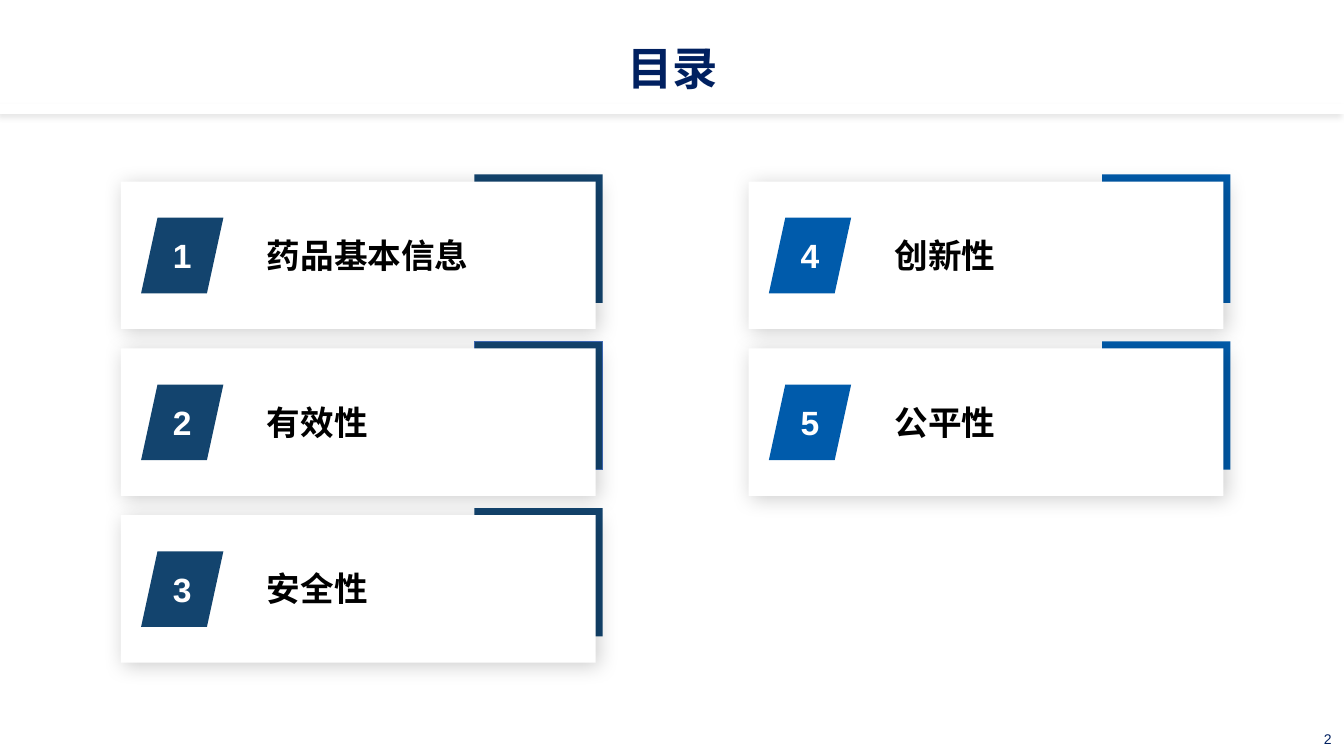
from dataclasses import dataclass
from typing import Optional

import lxml.etree
import pptx
import pptx.dml.color
import pptx.enum.shapes
import pptx.enum.text
import pptx.oxml.ns
import pptx.util

Pt = pptx.util.Pt
RGBColor = pptx.dml.color.RGBColor
Shapes = pptx.enum.shapes.MSO_SHAPE
Align = pptx.enum.text.PP_ALIGN
Anchor = pptx.enum.text.MSO_ANCHOR
qn = pptx.oxml.ns.qn

WHITE = RGBColor(0xFF, 0xFF, 0xFF)
BLACK = RGBColor(0x00, 0x00, 0x00)
TITLE_NAVY = RGBColor(0x00, 0x20, 0x60)
STEEL = RGBColor(0x13, 0x44, 0x6E)
BLUE = RGBColor(0x00, 0x5B, 0xAB)
EDGE_BLUE = RGBColor(0x3F, 0x6A, 0xB6)

LATIN_FONT = "Arial"
CHINESE_FONT = "Noto Sans CJK SC"

CARD_LEFT, CARD_TOP = 86.4, 129.7
COLUMN_PITCH, ROW_PITCH = 448.4, 119.15


@dataclass(frozen=True)
class Box:
    left: float
    top: float
    width: float
    height: float

    def moved(self, x: float, y: float) -> "Box":
        return Box(self.left + x, self.top + y, self.width, self.height)

    def lengths(self) -> tuple:
        return Pt(self.left), Pt(self.top), Pt(self.width), Pt(self.height)


@dataclass(frozen=True)
class Shadow:
    opacity: int
    blur: float
    distance: float
    angle: int


@dataclass(frozen=True)
class Topic:
    label: str
    column: int
    row: int
    color: RGBColor
    edge: Optional[RGBColor] = None


# Card parts, measured from the card's top left corner
ACCENT = Box(252.4, -5.1, 91.7, 91.7)
CARD = Box(0, 0, 339, 105.3)
BADGE = Box(14.4, 25.8, 58.8, 54)
LABEL = Box(97.2, 34.4, 162.7, 36)

HEADER_SHADOW = Shadow(10, 4, 3, 135)
CARD_SHADOW = Shadow(20, 15, 3, 45)

TOPICS = [
    Topic("药品基本信息", 0, 0, STEEL),
    Topic("有效性", 0, 1, STEEL, EDGE_BLUE),
    Topic("安全性", 0, 2, STEEL),
    Topic("创新性", 1, 0, BLUE),
    Topic("公平性", 1, 1, BLUE),
]


def add_shadow(shape, shadow: Shadow) -> None:
    effects = shape._element.spPr.find(qn("a:effectLst"))
    outer = lxml.etree.SubElement(
        effects, qn("a:outerShdw"),
        blurRad=str(Pt(shadow.blur)), dist=str(Pt(shadow.distance)),
        dir=str(shadow.angle * 60000), algn="ctr", rotWithShape="0")
    color = lxml.etree.SubElement(outer, qn("a:srgbClr"), val=str(BLACK))
    lxml.etree.SubElement(color, qn("a:alpha"), val=str(shadow.opacity * 1000))


def add_block(shapes, kind, box: Box, fill: RGBColor,
              edge: Optional[RGBColor] = None, shadow: Optional[Shadow] = None):
    shape = shapes.add_shape(kind, *box.lengths())
    shape.shadow.inherit = False
    shape.fill.solid()
    shape.fill.fore_color.rgb = fill
    if edge is None:
        shape.line.fill.background()
    else:
        shape.line.color.rgb = edge
        shape.line.width = Pt(1)
    if shadow is not None:
        add_shadow(shape, shadow)
    return shape


def write_text(shape, text: str, size: float, color: RGBColor, bold: bool = True,
               align=Align.LEFT, anchor=Anchor.TOP, wrap: bool = True,
               font: str = LATIN_FONT, spacing: float = 1.0) -> None:
    frame = shape.text_frame
    frame.word_wrap = wrap
    frame.vertical_anchor = anchor
    paragraph = frame.paragraphs[0]
    paragraph.alignment = align
    paragraph.line_spacing = spacing
    run = paragraph.add_run()
    run.text = text
    run.font.size = Pt(size)
    run.font.bold = bold
    run.font.name = font
    run.font.color.rgb = color
    lxml.etree.SubElement(run.font._element, qn("a:ea"), typeface=CHINESE_FONT)


def add_topic(slide, number: int, topic: Topic) -> None:
    x = CARD_LEFT + topic.column * COLUMN_PITCH
    y = CARD_TOP + topic.row * ROW_PITCH
    shapes = slide.shapes.add_group_shape().shapes
    add_block(shapes, Shapes.RECTANGLE, ACCENT.moved(x, y), topic.color, topic.edge)
    add_block(shapes, Shapes.RECTANGLE, CARD.moved(x, y), WHITE, shadow=CARD_SHADOW)
    badge = add_block(shapes, Shapes.FLOWCHART_DATA, BADGE.moved(x, y), topic.color)
    write_text(badge, str(number), 24, WHITE, align=Align.CENTER,
               anchor=Anchor.MIDDLE, wrap=False)
    label = shapes.add_textbox(*LABEL.moved(x, y).lengths())
    write_text(label, topic.label, 24, BLACK)


def main() -> None:
    presentation = pptx.Presentation()
    presentation.slide_width = Pt(960)
    presentation.slide_height = Pt(540)
    slide = presentation.slides.add_slide(presentation.slide_layouts[6])

    # Header
    add_block(slide.shapes, Shapes.RECTANGLE, Box(0, 74.2, 960, 7.2), WHITE,
              shadow=HEADER_SHADOW)
    title = slide.shapes.add_textbox(*Box(31, 19.4, 898.6, 50.4).lengths())
    write_text(title, "目录", 32.4, TITLE_NAVY, align=Align.CENTER,
               anchor=Anchor.MIDDLE, font=CHINESE_FONT, spacing=1.2)

    # Page number
    page = slide.shapes.add_textbox(*Box(742.3, 508.3, 216, 28.8).lengths())
    write_text(page, "2", 10, TITLE_NAVY, bold=False, align=Align.RIGHT,
               anchor=Anchor.BOTTOM)

    # Topic cards
    for number, topic in enumerate(TOPICS, start=1):
        add_topic(slide, number, topic)

    presentation.save("out.pptx")


if __name__ == "__main__":
    main()
